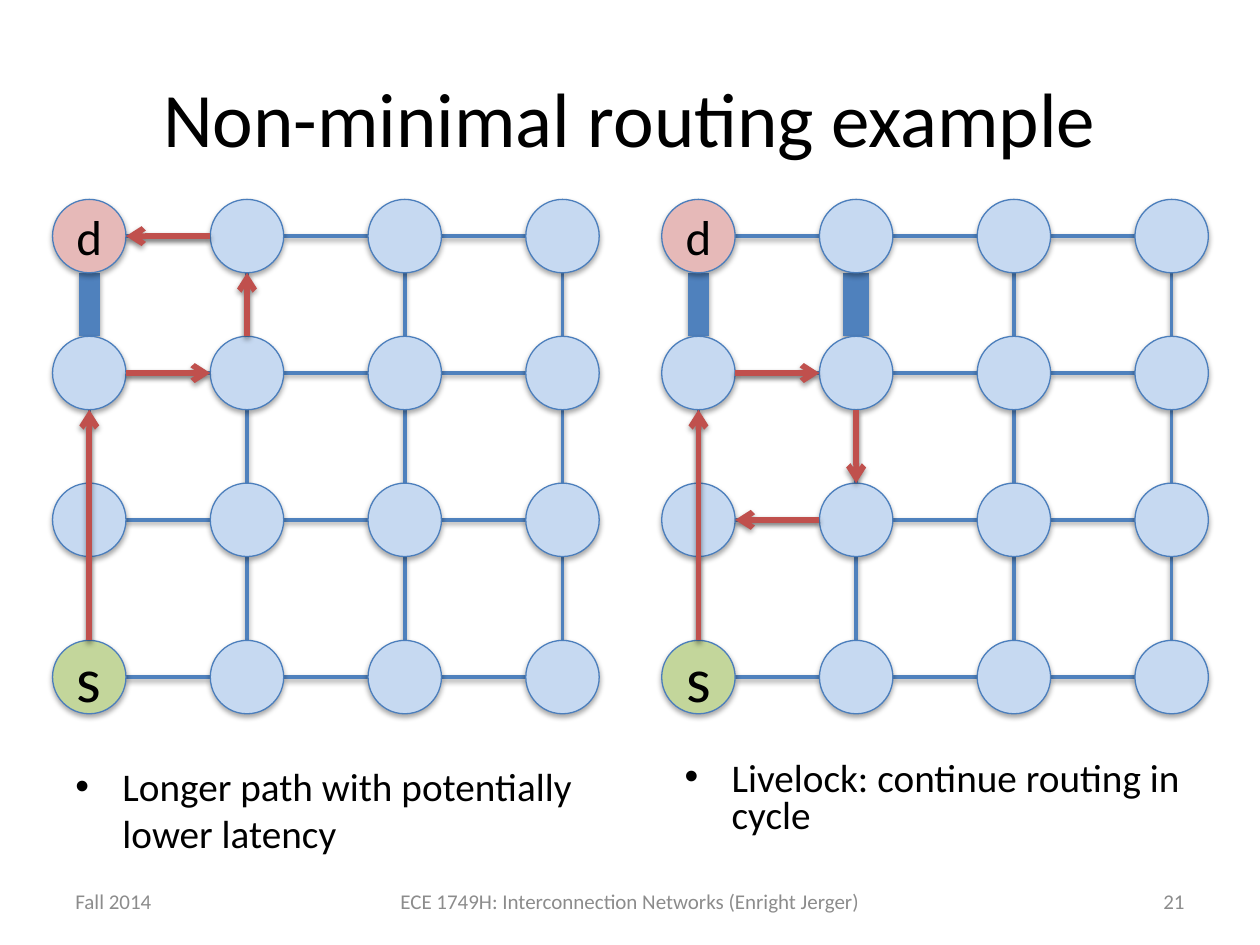
from lxml import etree
from pptx import Presentation
from pptx import util as u
from pptx.dml.color import RGBColor
from pptx.enum import shapes, text
from pptx.oxml import ns

BLUE, EDGE, PALE = "4F81BD", "4B7EBC", "C6D9F1"
RED, PINK, GREEN = "C0504D", "E6B9B8", "C3D69B"
BLACK, GREY = "000000", "8C8C8C"
LEFT, MID, RIGHT = text.PP_ALIGN.LEFT, text.PP_ALIGN.CENTER, text.PP_ALIGN.RIGHT

SIZE = 1.48                        # node diameter, cm
ROWS = [4.76, 7.52, 10.48, 13.65]  # node centres, cm
COLS = [1.8 + 3.18 * i for i in range(4)]


def color(code):
    return RGBColor.from_string(code)


def add(parent, tag, **attrs):
    node = etree.SubElement(parent, ns.qn(tag))
    for key, val in attrs.items():
        node.set(key, str(val))
    return node


class Deck:
    """Holds the style and the current slide."""
    font = "Calibri"

    def __init__(self):
        self.prs = Presentation()
        self.prs.slide_width, self.prs.slide_height = u.Cm(25.4), u.Cm(19.05)
        self.slide = self.prs.slides.add_slide(self.prs.slide_layouts[5])

    def letter(self, shape, words, size, ink=BLACK, align=MID,
               anchor=text.MSO_ANCHOR.MIDDLE):
        """Set and format the text of a shape; return its paragraph."""
        frame = shape.text_frame
        frame.text = words
        frame.word_wrap = True
        frame.vertical_anchor = anchor
        para = frame.paragraphs[0]
        para.alignment = align
        for run in para.runs:
            run.font.name, run.font.size = self.font, u.Pt(size)
            run.font.color.rgb = color(ink)
        return para

    def shade(self, shape, dist, alpha):
        """Drop a soft black shadow straight down."""
        fx = add(shape.element.spPr, "a:effectLst")
        drop = add(fx, "a:outerShdw", blurRad=u.Pt(3.1), dist=u.Pt(dist),
                   dir=90 * 60000, rotWithShape=0)
        add(add(drop, "a:srgbClr", val=BLACK), "a:alpha", val=alpha * 1000)

    def title(self, words):
        shape = self.slide.shapes.title
        shape.left, shape.top = u.Cm(1.27), u.Cm(0.76)
        shape.width, shape.height = u.Cm(22.86), u.Cm(3.18)
        self.letter(shape, words, 44)

    def box(self, x, y, w, h):
        return self.slide.shapes.add_textbox(u.Cm(x), u.Cm(y), u.Cm(w), u.Cm(h))

    def label(self, x, w, words, align):
        self.letter(self.box(x, 17.65, w, 1.02), words, 12, GREY, align)

    def bullet(self, x, words, gap=1.0):
        para = self.letter(self.box(x, 15.24, 10.8, 1.78), words, 22.4,
                           align=LEFT, anchor=text.MSO_ANCHOR.TOP)
        para.line_spacing = gap
        prop = para._p.get_or_add_pPr()
        prop.set("marL", str(u.Cm(0.95)))
        prop.set("indent", str(-u.Cm(0.95)))
        add(prop, "a:buFont", typeface="Arial")
        add(prop, "a:buChar", char="•")

    def node(self, x, y, fill=PALE, words="", size=28):
        shape = self.slide.shapes.add_shape(
            shapes.MSO_SHAPE.OVAL, u.Cm(x - SIZE / 2), u.Cm(y - SIZE / 2),
            u.Cm(SIZE), u.Cm(SIZE))
        shape.fill.solid()
        shape.fill.fore_color.rgb = color(fill)
        shape.line.color.rgb = color(EDGE)
        shape.line.width = u.Pt(0.75)
        self.shade(shape, 1.8, 35)
        if words:
            frame = shape.text_frame
            frame.margin_left = frame.margin_right = 0
            frame.margin_top = frame.margin_bottom = 0
            self.letter(shape, words, size)

    def link(self, start, end, ink=BLUE, width=2, arrow=False):
        """Join two node centres in one row or column, from rim to rim."""
        (x1, y1), (x2, y2) = start, end
        dx = SIZE / 2 * ((x2 > x1) - (x2 < x1))
        dy = SIZE / 2 * ((y2 > y1) - (y2 < y1))
        line = self.slide.shapes.add_connector(
            shapes.MSO_CONNECTOR.STRAIGHT, u.Cm(x1 + dx), u.Cm(y1 + dy),
            u.Cm(x2 - dx), u.Cm(y2 - dy))
        line.line.color.rgb = color(ink)
        line.line.width = u.Pt(width)
        if arrow:
            add(line.element.spPr.find(ns.qn("a:ln")), "a:tailEnd", type="arrow")
        self.shade(line, 1.6, 38)

    def mesh(self, left, busy, route):
        """Draw a 4 by 4 network; busy maps a column to its top link's width."""
        def spot(col, row):
            return left + COLS[col], ROWS[row]

        for row in range(4):
            for col in range(4):
                if col < 3:
                    self.link(spot(col, row), spot(col + 1, row))
                if row < 3:
                    width = busy.get(col, 2) if row == 0 else 2
                    self.link(spot(col, row), spot(col, row + 1), width=width)
        ends = {(0, 0): (PINK, "d", 28), (0, 3): (GREEN, "s", 36)}
        for row in range(4):
            for col in range(4):
                self.node(*spot(col, row), *ends.get((col, row), ()))
        for start, end in zip(route, route[1:]):
            self.link(spot(*start), spot(*end), RED, 3.25, True)


def main():
    deck = Deck()
    deck.title("Non-minimal routing example")
    deck.mesh(0, {0: 12}, [(0, 3), (0, 1), (1, 1), (1, 0), (0, 0)])
    deck.mesh(12.28, {0: 12, 1: 15}, [(0, 3), (0, 1), (1, 1), (1, 2), (0, 2)])
    deck.bullet(1.27, "Longer path with potentially lower latency")
    deck.bullet(13.55, "Livelock: continue routing in cycle", 0.8)
    deck.label(1.27, 5.93, "Fall 2014", LEFT)
    deck.label(7.2, 11, "ECE 1749H: Interconnection Networks (Enright Jerger)", MID)
    deck.label(18.2, 5.93, "21", RIGHT)
    deck.prs.save("out.pptx")


if __name__ == "__main__":
    main()
